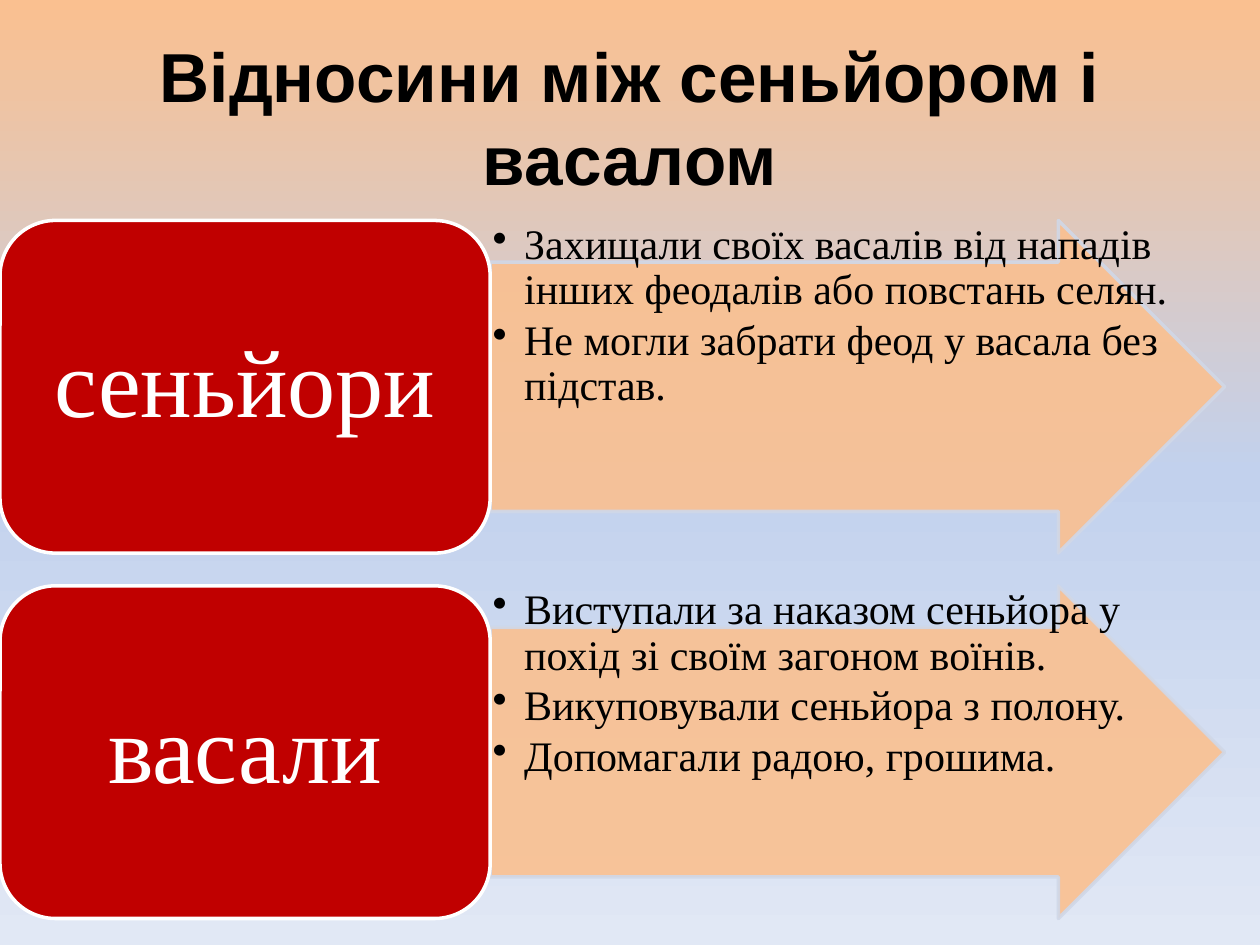
from lxml import etree
from pptx import Presentation
from pptx.dml.color import RGBColor
from pptx.enum import shapes, text
from pptx.oxml.ns import qn
from pptx.util import Inches, Pt

SERIF = "Times New Roman"
ROW_TOP, ROW_STEP, ROW_HEIGHT = 1.75, 2.9, 2.64
LABEL_WIDTH, ARROW_WIDTH = 3.89, 5.83
ROWS = [
    ("сеньйори", [
        "Захищали своїх васалів від нападів інших феодалів або повстань селян.",
        "Не могли забрати феод у васала без підстав.",
    ]),
    ("васали", [
        "Виступали за наказом сеньйора у похід зі своїм загоном воїнів.",
        "Викуповували сеньйора з полону.",
        "Допомагали радою, грошима.",
    ]),
]


def color(value):
    return RGBColor.from_string(value)


def paint_background(page, stops):
    """Fill the page with a gradient running from top to bottom."""
    fill = page.background.fill
    fill.gradient()
    fill.gradient_angle = 270  # counter-clockwise, so this points down
    stop_list = page.background._cSld.find(".//" + qn("a:gsLst"))
    for stop in list(stop_list):
        stop_list.remove(stop)
    for position, value in stops:
        stop = etree.SubElement(stop_list, qn("a:gs"), pos=str(position * 1000))
        etree.SubElement(stop, qn("a:srgbClr"), val=value)


def set_opacity(shape, percent):
    """Make fill and line partly transparent."""
    for rgb in shape._element.spPr.iter(qn("a:srgbClr")):
        etree.SubElement(rgb, qn("a:alpha"), val=str(percent * 1000))


def add_block(page, kind, bounds, fill, line):
    block = page.shapes.add_shape(kind, *map(Inches, bounds))
    block.shadow.inherit = False
    block.fill.solid()
    block.fill.fore_color.rgb = color(fill)
    block.line.color.rgb = color(line)
    block.line.width = Pt(2)
    return block


def set_frame(shape, margins, anchor):
    frame = shape.text_frame
    frame.word_wrap = True
    frame.vertical_anchor = anchor
    across, down = map(Inches, margins)
    frame.margin_left = frame.margin_right = across
    frame.margin_top = frame.margin_bottom = down
    return frame


def write(para, words, name, size, value, bold=False):
    para.text = words
    font = para.font
    font.name, font.size, font.bold = name, Pt(size), bold
    font.color.rgb = color(value)


def add_title(page, words):
    box = page.shapes.add_textbox(*map(Inches, (0.5, 0.3, 9, 1.25)))
    frame = set_frame(box, (0.1, 0.05), text.MSO_ANCHOR.MIDDLE)
    para = frame.paragraphs[0]
    para.alignment = text.PP_ALIGN.CENTER
    write(para, words, "Arial", 39.6, "000000", bold=True)


def add_label(page, top, words):
    block = add_block(page, shapes.MSO_SHAPE.ROUNDED_RECTANGLE,
                      (0, top, LABEL_WIDTH, ROW_HEIGHT), "C00000", "FFFFFF")
    frame = set_frame(block, (0.1, 0), text.MSO_ANCHOR.MIDDLE)
    para = frame.paragraphs[0]
    para.alignment = text.PP_ALIGN.CENTER
    para.line_spacing = 0.9
    write(para, words, SERIF, 55, "FFFFFF")


def add_arrow(page, top):
    arrow = add_block(page, shapes.MSO_SHAPE.RIGHT_ARROW,
                      (LABEL_WIDTH, top, ARROW_WIDTH, ROW_HEIGHT), "FAC090", "D0D8E8")
    arrow.adjustments[0] = 0.75
    arrow.adjustments[1] = 0.5
    set_opacity(arrow, 90)


def add_bullets(page, top, items):
    bounds = (LABEL_WIDTH, top, ARROW_WIDTH, ROW_HEIGHT)
    box = page.shapes.add_textbox(*map(Inches, bounds))
    frame = set_frame(box, (0.02, 0.02), text.MSO_ANCHOR.TOP)
    for index, item in enumerate(items):
        para = frame.add_paragraph() if index else frame.paragraphs[0]
        para.line_spacing = 0.9
        para.space_after = Pt(3)
        # Hanging bullet
        properties = para._p.get_or_add_pPr()
        properties.set("marL", str(Inches(0.25)))
        properties.set("indent", str(-Inches(0.25)))
        etree.SubElement(properties, qn("a:buChar"), char="•")
        write(para, item, SERIF, 24, "000000")


def main():
    deck = Presentation()
    deck.slide_width, deck.slide_height = Inches(10), Inches(7.5)
    page = deck.slides.add_slide(deck.slide_layouts[6])
    paint_background(page, [(0, "FAC090"), (50, "C2D1ED"), (100, "E1E8F5")])
    add_title(page, "Відносини між сеньйором і васалом")

    # One row per side: arrow with duties, then the label
    for index, (label, duties) in enumerate(ROWS):
        top = ROW_TOP + index * ROW_STEP
        add_arrow(page, top)
        add_bullets(page, top, duties)
        add_label(page, top, label)
    deck.save("out.pptx")


if __name__ == "__main__":
    main()
